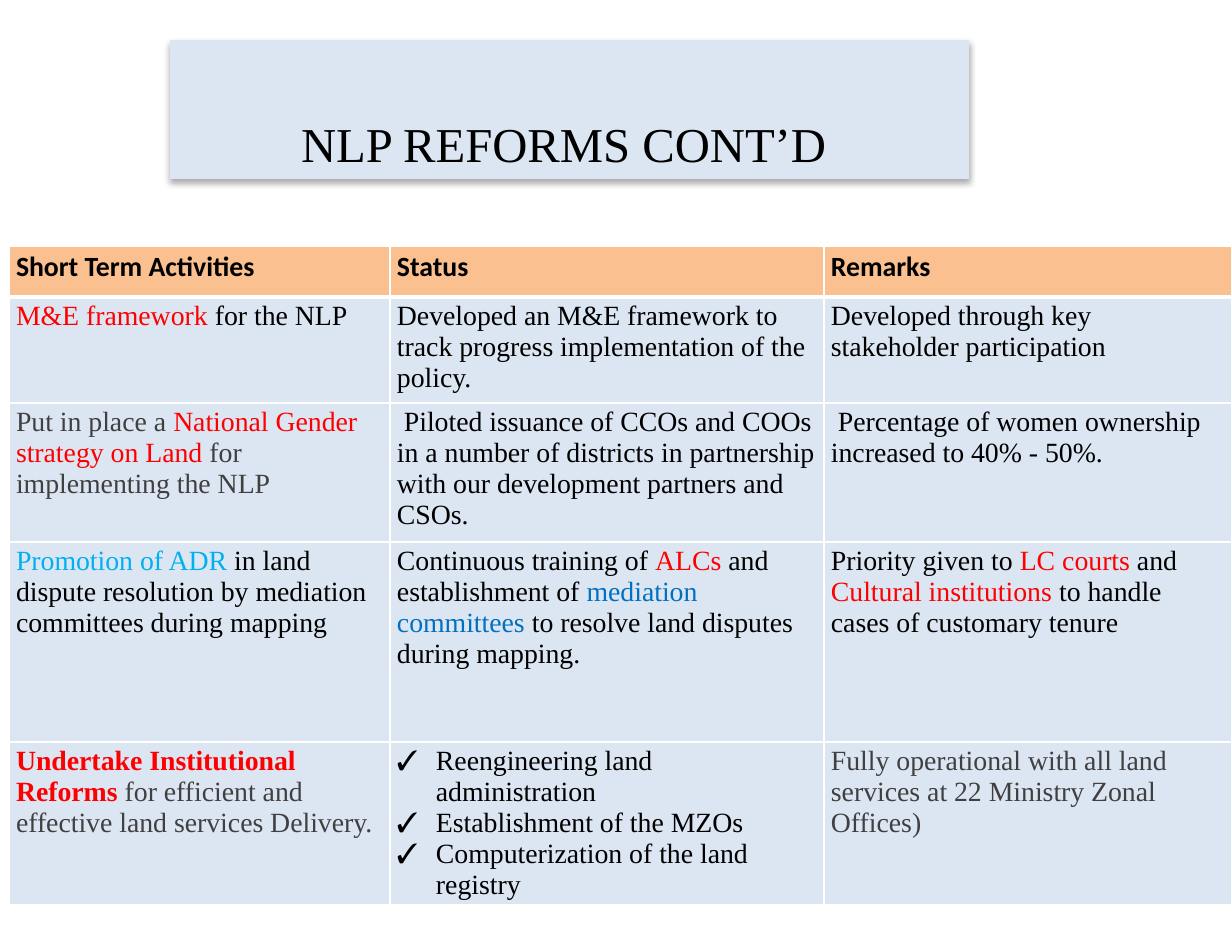
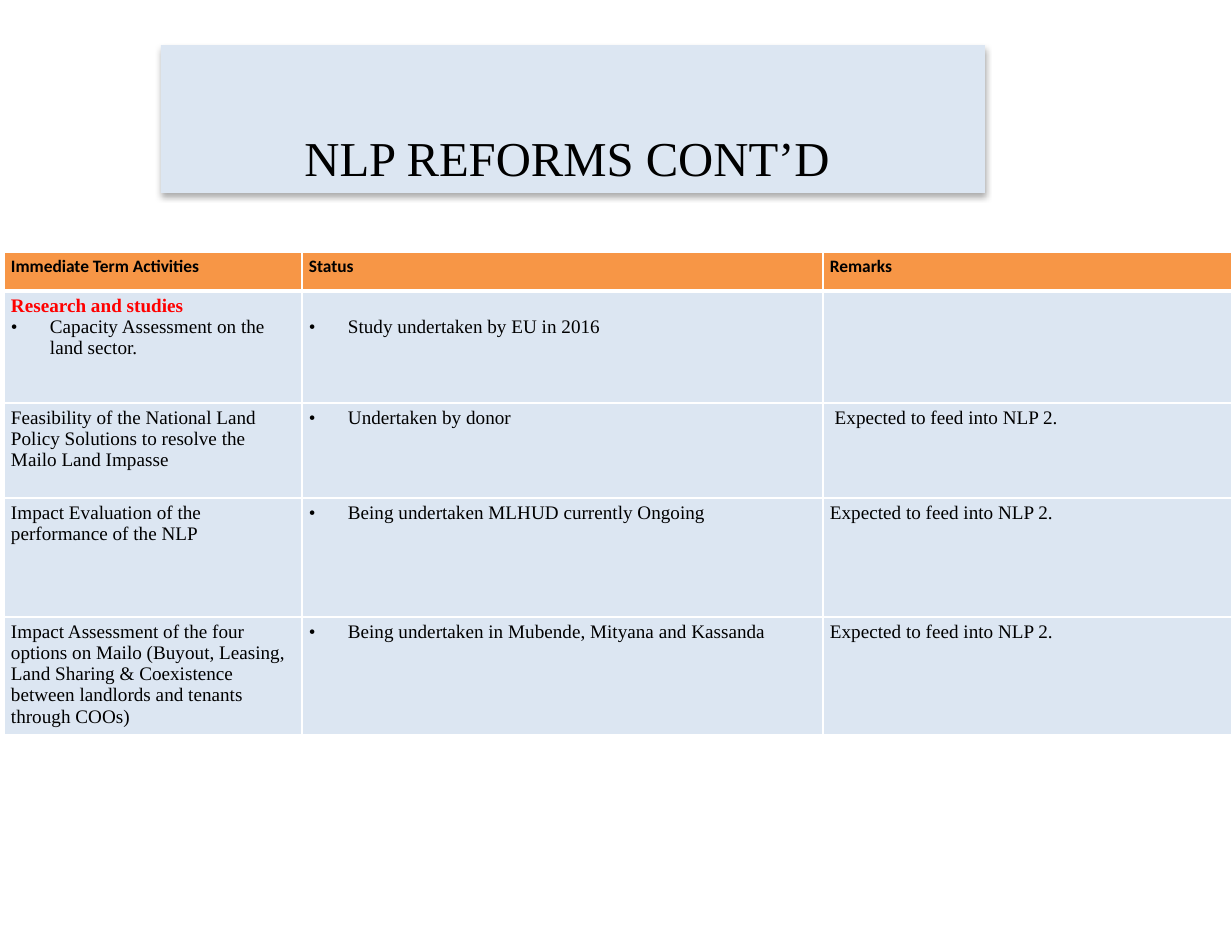
from lxml import etree
from pptx import Presentation
from pptx import util as u
from pptx.dml import color
from pptx.enum import text
from pptx.oxml import ns

SCALE = 914400 / 125.2
RED, GREY = "FF0000", "404040"
SKY, BLUE = "00B0F0", "0070C0"


def px(n):
    return u.Emu(round(n * SCALE))


def rgb(code):
    return color.RGBColor.from_string(code)


def apply(target, values):
    for name, value in values.items():
        setattr(target, name, value)


def sub(parent, tag, **attrs):
    """Append a DrawingML element."""
    node = etree.SubElement(parent, ns.qn("a:" + tag))
    for name, value in attrs.items():
        node.set(name, str(value))
    return node


def para(*runs, mark=""):
    """One paragraph: runs are text or (text, colour[, bold])."""
    return runs, mark


class Deck:
    ink, white, pale = "000000", "FFFFFF", "DCE6F2"
    serif, sans = "Times New Roman", "Calibri"
    inset = {"margin_left": px(7), "margin_right": px(7),
             "margin_top": px(4), "margin_bottom": px(4)}
    # The wider right margin sets the heading slightly left of centre.
    frame = {"margin_left": px(13), "margin_right": px(25),
             "margin_top": px(6), "margin_bottom": px(6),
             "word_wrap": True, "auto_size": text.MSO_AUTO_SIZE.NONE,
             "vertical_anchor": text.MSO_ANCHOR.BOTTOM}

    def __init__(self):
        self.prs = Presentation()
        apply(self.prs, {"slide_width": px(1232), "slide_height": px(936)})
        self.slide = None

    def start(self):
        self.slide = self.prs.slides.add_slide(self.prs.slide_layouts[5])

    def fill(self, item, code):
        item.fill.solid()
        item.fill.fore_color.rgb = rgb(code)

    def style(self, font, size, face, code, bold=False):
        apply(font, {"size": u.Pt(size), "name": face, "bold": bold})
        font.color.rgb = rgb(code)

    def title(self, words, left, top, width, height):
        box = self.slide.shapes.title
        apply(box, {"left": px(left), "top": px(top),
                    "width": px(width), "height": px(height)})
        self.fill(box, self.pale)
        effects = sub(box._element.spPr, "effectLst")
        shade = sub(effects, "outerShdw", blurRad=u.Pt(3.5), dist=u.Pt(2.2),
                    dir=5400000, rotWithShape=0)
        sub(sub(shade, "srgbClr", val=self.ink), "alpha", val=32000)
        apply(box.text_frame, self.frame)
        line = box.text_frame.paragraphs[0]
        apply(line, {"alignment": text.PP_ALIGN.CENTER, "line_spacing": 0.9})
        run = line.add_run()
        run.text = words
        self.style(run.font, 28, self.serif, self.ink)

    def bullet(self, line, mark):
        props = line._p.get_or_add_pPr()
        props.set("marL", str(px(39)))
        props.set("indent", str(px(-39)))
        sub(props, "buFont", typeface=self.serif)
        sub(props, "buChar", char=mark)

    def border(self, cell, row):
        """Draw white edges, thick between the header and the first row."""
        props = cell._tc.get_or_add_tcPr()
        thick = {0: "lnB", 1: "lnT"}.get(row)
        for spot, tag in enumerate(("lnL", "lnR", "lnT", "lnB")):
            edge = sub(props, tag, w=u.Pt(3 if tag == thick else 1))
            sub(sub(edge, "solidFill"), "srgbClr", val=self.white)
            props.insert(spot, edge)

    def label(self, cell, paras, size, face, bold):
        box = cell.text_frame
        for spot, (runs, mark) in enumerate(paras):
            line = box.add_paragraph() if spot else box.paragraphs[0]
            if mark:
                self.bullet(line, mark)
            for part in runs:
                words, code, heavy = (
                    (part, self.ink, bold) if isinstance(part, str)
                    else (*part, bold)[:3])
                run = line.add_run()
                run.text = words
                self.style(run.font, size, face, code, heavy)

    def table(self, left, top, cols, rows, data, band, head, size):
        """Add a table; head and size are the header and body text sizes."""
        grid = self.slide.shapes.add_table(
            len(rows), len(cols), px(left), px(top),
            px(sum(cols)), px(sum(rows))).table
        grid.horz_banding = False
        for col, width in zip(grid.columns, cols):
            col.width = px(width)
        for r, (height, items) in enumerate(zip(rows, data)):
            grid.rows[r].height = px(height)
            look = (size, self.serif, False) if r else (head, self.sans, True)
            for c, item in enumerate(items):
                cell = grid.cell(r, c)
                apply(cell, self.inset)
                self.fill(cell, self.pale if r else band)
                self.border(cell, r)
                paras = [para(item)] if isinstance(item, str) else item
                self.label(cell, paras, *look)
        return grid


SHORT = [
    ["Short Term Activities", "Status", "Remarks"],
    [[para(("M&E framework ", RED), "for the NLP")],
     "Developed an M&E framework to track progress implementation of the "
     "policy.",
     "Developed through key stakeholder participation"],
    [[para(("Put in place a ", GREY),
           ("National Gender strategy on Land ", RED),
           ("for implementing the NLP", GREY))],
     " Piloted issuance of CCOs and COOs in a number of districts in "
     "partnership with our development partners and CSOs.",
     " Percentage of women ownership increased to 40% - 50%."],
    [[para(("Promotion of ADR ", SKY),
           "in land dispute resolution by mediation committees during "
           "mapping")],
     [para("Continuous training of ", ("ALCs", RED),
           " and establishment of ", ("mediation committees", BLUE),
           " to resolve land disputes during mapping.")],
     [para("Priority given to ", ("LC courts", RED), " and ",
           ("Cultural institutions", RED),
           " to handle cases of customary tenure")]],
    [[para(("Undertake Institutional Reforms ", RED, True),
           ("for efficient and effective land services Delivery.", GREY))],
     [para(words, mark="✓") for words in (
         "Reengineering land administration",
         "Establishment of the MZOs",
         "Computerization of the land registry")],
     [para(("Fully operational with all land services at 22 Ministry Zonal "
            "Offices)", GREY))]],
]

URGENT = [
    ["Immediate Term Activities", "Status", "Remarks"],
    [[para(("Research and studies", RED, True)),
      para("Capacity Assessment on the land sector.", mark="•")],
     [para("Study undertaken by EU in 2016", mark="•")],
     []],
    ["Feasibility of the National Land Policy Solutions to resolve the Mailo "
     "Land Impasse",
     [para("Undertaken by donor", mark="•")],
     " Expected to feed into NLP 2."],
    ["Impact Evaluation of the performance of the NLP",
     [para("Being undertaken MLHUD currently Ongoing", mark="•")],
     "Expected to feed into NLP 2."],
    ["Impact Assessment of the four options on Mailo (Buyout, Leasing, Land "
     "Sharing & Coexistence between landlords and tenants through COOs)",
     [para("Being undertaken in Mubende, Mityana and Kassanda", mark="•")],
     "Expected to feed into NLP 2."],
]


def main():
    deck = Deck()
    name = "NLP REFORMS CONT’D"

    deck.start()
    deck.title(name, 170, 40, 799, 139)
    deck.table(9, 246, [381, 434, 408], [51, 106, 139, 200, 161],
               SHORT, "FAC090", 16, 16)

    deck.start()
    deck.title(name, 161, 45, 824, 148)
    grid = deck.table(4, 252, [298, 521, 409], [39, 112, 95, 119, 118],
                      URGENT, "F79646", 10, 11)
    # Level the study with the second line of its neighbour.
    grid.cell(1, 1).margin_top = px(25)

    deck.prs.save("out.pptx")


if __name__ == "__main__":
    main()
